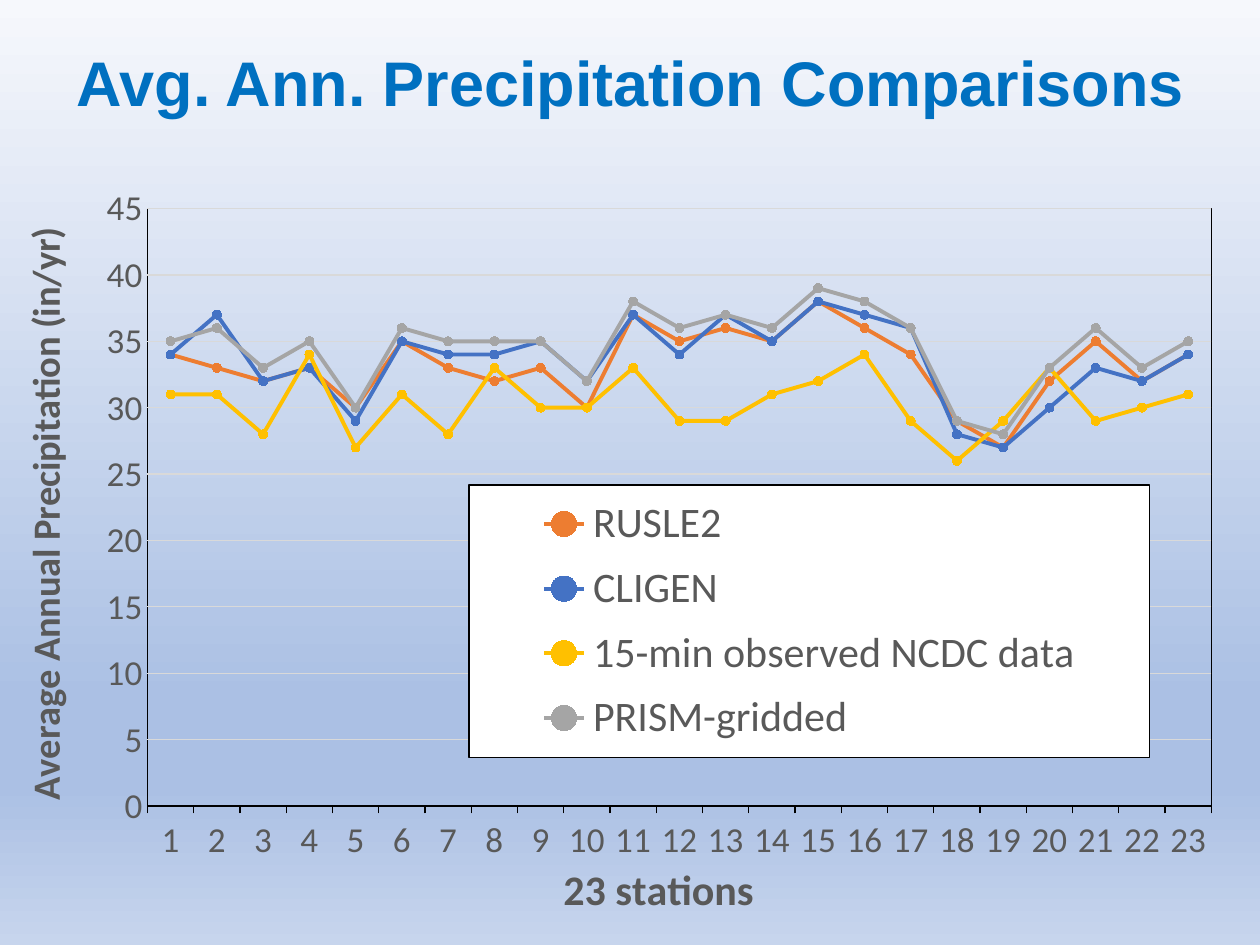
"""Build the slide comparing average annual precipitation at 23 stations."""
from dataclasses import dataclass

from pptx import Presentation
from pptx.chart.data import CategoryChartData
from pptx.dml.color import RGBColor
from pptx.enum.chart import XL_CHART_TYPE, XL_LEGEND_POSITION, XL_MARKER_STYLE, XL_TICK_MARK
from pptx.enum.text import MSO_ANCHOR, MSO_AUTO_SIZE, PP_ALIGN
from pptx.oxml import parse_xml
from pptx.oxml.ns import nsdecls, qn
from pptx.util import Cm, Pt

GREY, BLACK = "595959", "000000"
STOPS = [(0, "F6F8FC"), (74, "ABC0E4"), (83, "ABC0E4"), (100, "C7D5ED")]


@dataclass
class Line:
    name: str
    color: str
    values: list[int]


LINES = [
    Line("RUSLE2", "ED7D31", [34, 33, 32, 33, 30, 35, 33, 32, 33, 30, 37, 35,
                              36, 35, 38, 36, 34, 29, 27, 32, 35, 32, 34]),
    Line("CLIGEN", "4472C4", [34, 37, 32, 33, 29, 35, 34, 34, 35, 32, 37, 34,
                              37, 35, 38, 37, 36, 28, 27, 30, 33, 32, 34]),
    Line("15-min observed NCDC data", "FFC000",
         [31, 31, 28, 34, 27, 31, 28, 33, 30, 30, 33, 29,
          29, 31, 32, 34, 29, 26, 29, 33, 29, 30, 31]),
    Line("PRISM-gridded", "A5A5A5", [35, 36, 33, 35, 30, 36, 35, 35, 35, 32, 38, 36,
                                     37, 36, 39, 38, 36, 29, 28, 33, 36, 33, 35]),
]


def rgb(color: str) -> RGBColor:
    return RGBColor.from_string(color)


def set_font(font, size: float, color: str, name: str = "Calibri", bold: bool = False) -> None:
    font.size, font.name, font.bold = Pt(size), name, bold
    font.color.rgb = rgb(color)


def put_text(tf, text: str, *, size: float, color: str, name: str = "Calibri",
             bold: bool = True, spacing: float = 1.0) -> None:
    p = tf.paragraphs[0]
    p.alignment, p.line_spacing = PP_ALIGN.CENTER, spacing
    r = p.add_run()
    r.text = text
    set_font(r.font, size, color, name, bold)


def set_line(line, color: str, width: float) -> None:
    line.color.rgb = rgb(color)
    line.width = Pt(width)


def set_layout(el, inner: bool = False, **place: float) -> None:
    """Place a chart part by fractions x, y, w and h of the chart."""
    for old in el.findall(qn("c:layout")):
        el.remove(old)
    target = '<c:layoutTarget val="inner"/>' if inner else ""
    modes = "".join(f'<c:{k}Mode val="edge"/>' for k in "xy")
    sizes = "".join(f'<c:{k} val="{v}"/>' for k, v in place.items())
    layout = parse_xml(f'<c:layout {nsdecls("c")}><c:manualLayout>{target}{modes}{sizes}'
                       '</c:manualLayout></c:layout>')
    overlay = el.find(qn("c:overlay"))
    if overlay is None:
        el.insert(0, layout)
    else:
        overlay.addprevious(layout)


def frame_xml(fill: str):
    """Return shape properties with the given fill and a thin black outline."""
    return parse_xml(f'<c:spPr {nsdecls("c", "a")}>{fill}<a:ln w="9525"><a:solidFill>'
                     f'<a:srgbClr val="{BLACK}"/></a:solidFill></a:ln></c:spPr>')


def set_background(s) -> None:
    fill = s.background.fill
    fill.gradient()
    fill.gradient_angle = 270
    gs_lst = next(s.element.iter(qn("a:gsLst")))
    for old in list(gs_lst):
        gs_lst.remove(old)
    for pos, color in STOPS:
        gs_lst.append(parse_xml(f'<a:gs {nsdecls("a")} pos="{pos * 1000}">'
                                f'<a:srgbClr val="{color}"/></a:gs>'))


def format_axis(axis, title: str, size: float, x: float, y: float) -> None:
    set_font(axis.tick_labels.font, 20, GREY)
    put_text(axis.axis_title.text_frame, title, size=size, color=GREY)
    set_layout(axis.axis_title._element, x=x, y=y)


def format_axes(chart) -> None:
    cat, val = chart.category_axis, chart.value_axis
    format_axis(cat, "23 stations", 24, 0.44, 0.9)
    cat.major_tick_mark = XL_TICK_MARK.OUTSIDE
    set_line(cat.format.line, BLACK, 0.75)
    format_axis(val, "Average Annual Precipitation (in/yr)", 22, 0, 0.11)
    body = next(val.axis_title._element.iter(qn("a:bodyPr")))
    body.set("rot", "-5400000")
    body.set("vert", "horz")
    val.minimum_scale, val.maximum_scale, val.major_unit = 0, 45, 5
    val.major_tick_mark = XL_TICK_MARK.NONE
    val.format.line.fill.background()
    set_line(val.major_gridlines.format.line, "D9D9D9", 0.75)


def format_legend(chart) -> None:
    chart.has_legend = True
    legend = chart.legend
    legend.position = XL_LEGEND_POSITION.BOTTOM
    legend.include_in_layout = False
    set_font(legend.font, 24, GREY)
    el = legend._element
    set_layout(el, x=0.37, y=0.44, w=0.55, h=0.34)
    white = '<a:solidFill><a:srgbClr val="FFFFFF"/></a:solidFill>'
    el.find(qn("c:overlay")).addnext(frame_xml(white))


def add_line_chart(s):
    data = CategoryChartData()
    data.categories = [str(n) for n in range(1, 24)]
    for line in LINES:
        data.add_series(line.name, line.values)
    frame = s.shapes.add_chart(XL_CHART_TYPE.LINE_MARKERS, Cm(0.23), Cm(2.67),
                               Cm(24.94), Cm(16.15), data)
    chart = frame.chart
    chart.has_title = False
    set_font(chart.font, 10, BLACK)
    plot = chart.plots[0]
    plot.vary_by_categories = False
    for series, line in zip(plot.series, LINES):
        series.smooth = False
        set_line(series.format.line, line.color, 2.25)
        marker = series.marker
        marker.style, marker.size = XL_MARKER_STYLE.CIRCLE, 5
        marker.format.fill.solid()
        marker.format.fill.fore_color.rgb = rgb(line.color)
        set_line(marker.format.line, line.color, 0.75)
    format_axes(chart)
    format_legend(chart)
    area = next(chart.element.iter(qn("c:plotArea")))
    set_layout(area, inner=True, x=0.11, y=0.095, w=0.86, h=0.746)
    area.append(frame_xml("<a:noFill/>"))
    return frame


def main() -> None:
    prs = Presentation()
    prs.slide_width, prs.slide_height = Cm(25.4), Cm(19.05)
    s = prs.slides.add_slide(prs.slide_layouts[5])
    set_background(s)
    title = s.shapes.title
    title.left, title.top, title.width, title.height = Cm(0.89), Cm(0.79), Cm(23.65), Cm(1.88)
    tf = title.text_frame
    tf.vertical_anchor, tf.auto_size = MSO_ANCHOR.MIDDLE, MSO_AUTO_SIZE.NONE
    put_text(tf, "Avg. Ann. Precipitation Comparisons", size=36, color="0070C0",
             name="Arial", spacing=0.9)
    frame = add_line_chart(s)
    title.element.addprevious(frame.element)
    prs.save("out.pptx")


if __name__ == "__main__":
    main()
